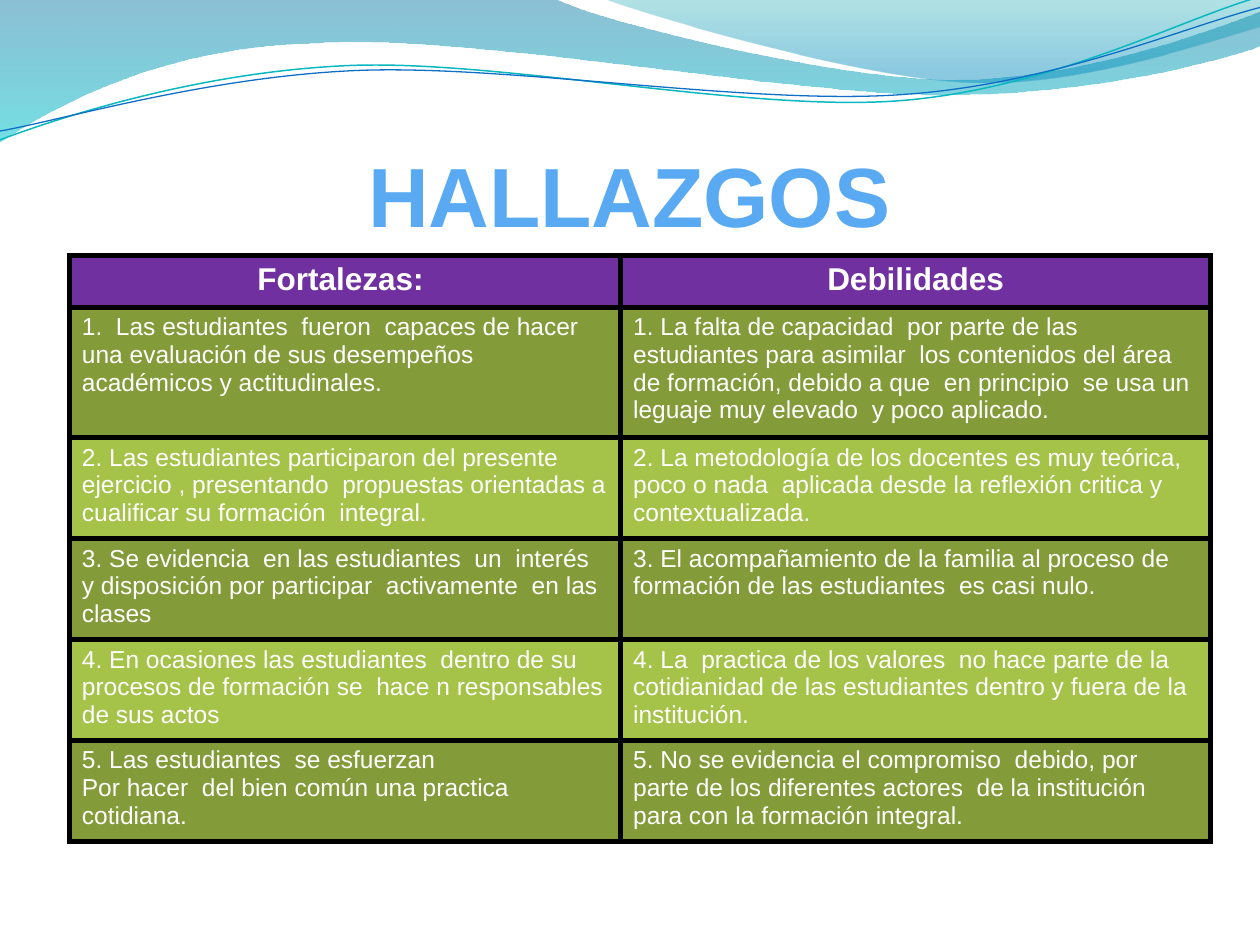
from math import cos, radians, sin

from lxml import etree
from pptx import Presentation
from pptx.dml.color import RGBColor
from pptx.enum.text import PP_ALIGN
from pptx.oxml.ns import qn
from pptx.util import Inches, Pt

CENTER, LEFT = PP_ALIGN.CENTER, PP_ALIGN.LEFT
WHITE = RGBColor(0xFF, 0xFF, 0xFF)
TITLE_BLUE = RGBColor(0x59, 0xAA, 0xF2)
PURPLE = RGBColor(0x70, 0x30, 0xA0)
OLIVE = RGBColor(0x84, 0x9B, 0x3A)
LIME = RGBColor(0xA5, 0xC2, 0x49)
DEEP_BLUE = RGBColor(0x00, 0x74, 0xA1)
AQUA = RGBColor(0x00, 0xC6, 0xCF)
TEAL = RGBColor(0x00, 0xA1, 0xA9)
SKY = RGBColor(0x00, 0x8B, 0xBF)
LINE_TEAL = RGBColor(0x0A, 0xB8, 0xBF)
LINE_BLUE = RGBColor(0x0F, 0x6F, 0xC6)
FONT = "Arial"
SLIDE_W, SLIDE_H = 10, 7.5
TILT = -2.7

WAVES = [
    ([(0, 0), (4.4, -0.01),
      (4.76, 0.17, 6.64, 0.63, 7.58, 0.63), (8.53, 0.63, 9.58, 0.26, 10, 0.09),
      (10.01, 0.36),
      (9.83, 0.44, 8.7, 0.76, 7.46, 0.75), (6.22, 0.75, 3.82, 0.28, 2.57, 0.34),
      (1.29, 0.36, 0.46, 0.83, -0.01, 1.13)],
     [(0, DEEP_BLUE, 45), (1, AQUA, 55)]),
    ([(4.79, -0.01),
      (5.09, 0.11, 6.82, 0.62, 7.69, 0.65), (8.56, 0.69, 9.61, 0.32, 10, 0.21),
      (10, 0)],
     [(0, TEAL, 30), (0.8, SKY, 45)]),
]
STRANDS = [
    ([(0, 1.11), (0.48, 0.93, 1.58, 0.57, 2.77, 0.52),
      (3.95, 0.47, 5.93, 0.89, 7.13, 0.8), (8.33, 0.71, 9.38, 0.15, 9.98, -0.02)],
     (4.99, 0.57), LINE_TEAL, 0.85),
    ([(0, 1.04), (0.47, 0.96, 1.64, 0.61, 2.83, 0.56),
      (4.03, 0.51, 5.97, 0.84, 7.17, 0.75), (8.36, 0.67, 9.41, 0.21, 10, 0.06)],
     (5, 0.59), LINE_BLUE, 0.75),
]
HEADERS = ["Fortalezas: ", "Debilidades"]
FINDINGS = [
    ("1.  Las estudiantes  fueron  capaces de hacer una evaluación de sus desempeños "
     "académicos y actitudinales.",
     "1. La falta de capacidad  por parte de las estudiantes para asimilar  los contenidos "
     "del área  de formación, debido a que  en principio  se usa un leguaje muy elevado  "
     "y poco aplicado."),
    ("2. Las estudiantes participaron del presente ejercicio , presentando  propuestas "
     "orientadas a cualificar su formación  integral.",
     "2. La metodología de los docentes es muy teórica, poco o nada  aplicada desde la "
     "reflexión critica y contextualizada."),
    ("3. Se evidencia  en las estudiantes  un  interés  y disposición por participar  "
     "activamente  en las clases",
     "3. El acompañamiento de la familia al proceso de formación de las estudiantes  "
     "es casi nulo."),
    ("4. En ocasiones las estudiantes  dentro de su  procesos de formación se  hace n "
     "responsables de sus actos",
     "4. La  practica de los valores  no hace parte de la cotidianidad de las estudiantes "
     "dentro y fuera de la institución."),
    ("5. Las estudiantes  se esfuerzan\nPor hacer  del bien común una practica cotidiana.",
     "5. No se evidencia el compromiso  debido, por  parte de los diferentes actores  "
     "de la institución para con la formación integral."),
]


def turn(pts, center, degrees):
    """Rotate points clockwise about a center."""
    a, (cx, cy) = radians(degrees), center
    return [(cx + (x - cx) * cos(a) - (y - cy) * sin(a),
             cy + (x - cx) * sin(a) + (y - cy) * cos(a)) for x, y in pts]


def add_outline(slide, box, segments, center=(0, 0), tilt=0):
    """Draw straight and cubic segments, closed unless tilted, inside the box."""
    x, y, w, h = box
    pts = [seg[i:i + 2] for seg in segments for i in range(0, len(seg), 2)]
    pts = [(Inches(x + px * w / SLIDE_W), Inches(y + py * h / SLIDE_H))
           for px, py in turn(pts, center, -tilt)]
    builder = slide.shapes.build_freeform(*pts[0])
    builder.add_line_segments(pts[1:], close=not tilt)
    sp = builder.convert_to_shape()
    sp.shadow.inherit = False
    sp.rotation = tilt
    lines = iter(list(sp._element.iter(qn("a:lnTo"))))
    for seg in segments[1:]:
        first = next(lines)
        if len(seg) == 6:
            first.tag = qn("a:cubicBezTo")
            for line in (next(lines), next(lines)):
                first.append(line[0])
                line.getparent().remove(line)
    return sp


def add_waves(slide, box):
    """Place the translucent waves and the thin strands over them."""
    for segments, stops in WAVES:
        sp = add_outline(slide, box, segments)
        sp.line.fill.background()
        sp.fill.gradient()
        sp.fill.gradient_angle = 270
        for stop, (position, color, _) in zip(sp.fill.gradient_stops, stops):
            stop.position = position
            stop.color.rgb = color
        for clr, (_, _, opacity) in zip(sp._element.spPr.iter(qn("a:srgbClr")), stops):
            etree.SubElement(clr, qn("a:alpha")).set("val", str(opacity * 1000))
    for segments, center, color, width in STRANDS:
        sp = add_outline(slide, box, segments, center, TILT)
        sp.fill.background()
        sp.line.color.rgb = color
        sp.line.width = Pt(width)


def style_text(tf, size, color, bold, align):
    """Format every paragraph and run of a text frame."""
    for p in tf.paragraphs:
        p.alignment = align
        for r in p.runs:
            r.font.name, r.font.size, r.font.bold = FONT, Pt(size), bold
            r.font.color.rgb = color


def add_title(slide, box):
    """Place the centred title."""
    tf = slide.shapes.add_textbox(*map(Inches, box)).text_frame
    tf.word_wrap = True
    tf.text = "HALLAZGOS"
    style_text(tf, 48, TITLE_BLUE, True, CENTER)


def set_borders(cell):
    """Give a cell black borders on all four sides."""
    tc_pr = cell._tc.get_or_add_tcPr()
    for i, side in enumerate(("lnL", "lnR", "lnT", "lnB")):
        ln = etree.Element(qn(f"a:{side}"), w=str(Pt(3)))
        fill = etree.SubElement(ln, qn("a:solidFill"))
        etree.SubElement(fill, qn("a:srgbClr"), val="000000")
        tc_pr.insert(i, ln)


def add_findings(slide, box):
    """Place the table of strengths and weaknesses."""
    x, y, w, h = box
    rows = [HEADERS, *FINDINGS]
    table = slide.shapes.add_table(len(rows), 2, *map(Inches, box)).table
    for col, width in zip(table.columns, (4.38, 4.69)):
        col.width = Inches(w * width / 9.07)
    for i, texts in enumerate(rows):
        table.rows[i].height = Inches(h * (0.41 if i == 0 else 0.7) / 3.91)
        color = PURPLE if i == 0 else OLIVE if i % 2 else LIME
        for j, text in enumerate(texts):
            cell = table.cell(i, j)
            cell.text_frame.text = text
            if i == 0:
                style_text(cell.text_frame, 18, WHITE, True, CENTER)
            else:
                style_text(cell.text_frame, 14, WHITE, False, LEFT)
            cell.fill.solid()
            cell.fill.fore_color.rgb = color
            set_borders(cell)


def main():
    """Build and save the slide."""
    prs = Presentation()
    prs.slide_width, prs.slide_height = Inches(SLIDE_W), Inches(SLIDE_H)
    slide = prs.slides.add_slide(prs.slide_layouts[6])
    add_waves(slide, (0, 0, SLIDE_W, SLIDE_H))
    add_title(slide, (0.86, 1.09, 8.27, 0.91))
    add_findings(slide, (0.55, 2.03, 9.06, 3.91))
    prs.save("out.pptx")


if __name__ == "__main__":
    main()
